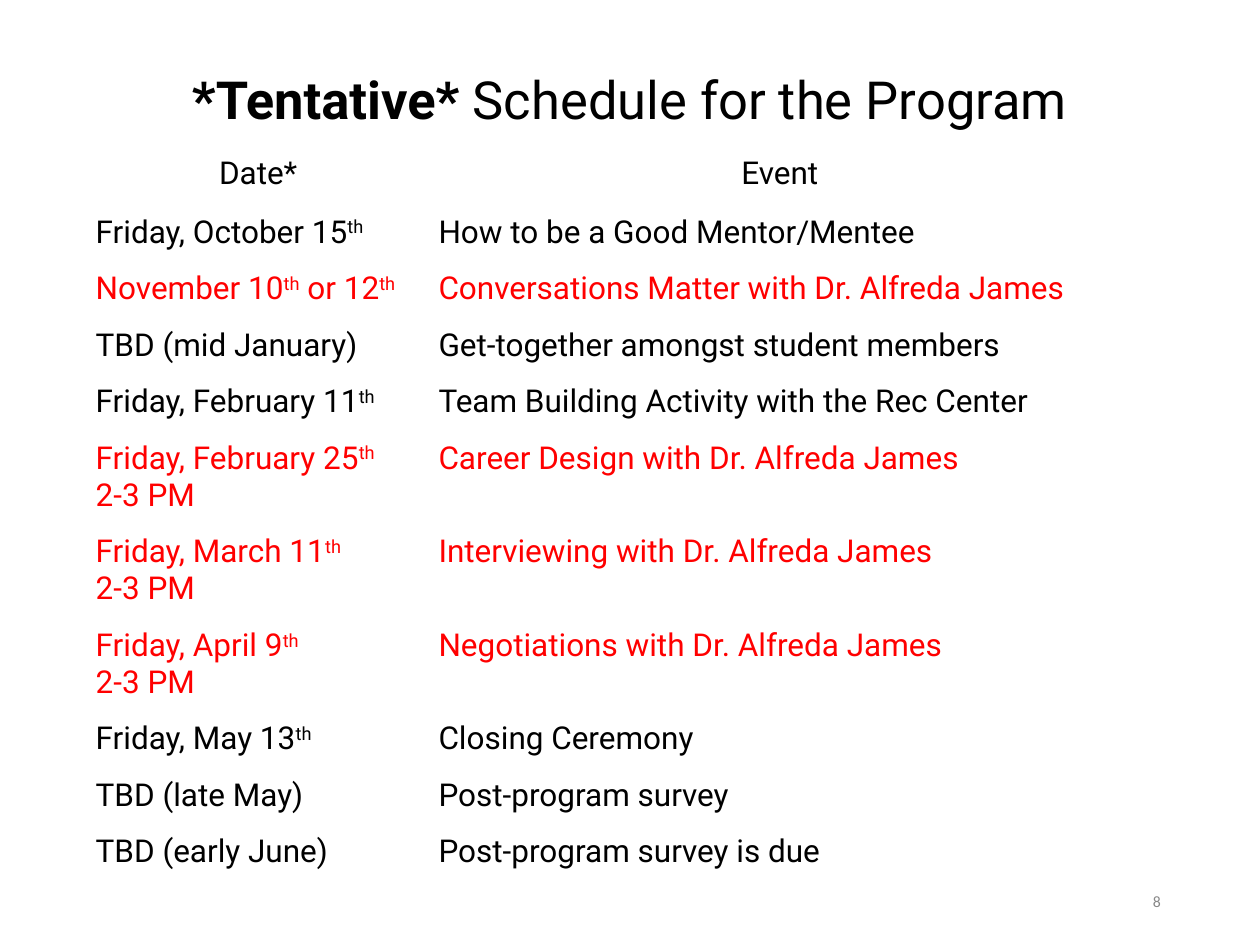
from dataclasses import dataclass

from pptx import Presentation
from pptx.dml.color import RGBColor
from pptx.enum.text import MSO_ANCHOR, MSO_AUTO_SIZE, PP_ALIGN
from pptx.util import Cm, Pt

COLORS = {"text": "000000", "guest": "FF0000", "number": "888888"}
TITLE_ONLY_LAYOUT = 5
LEFT = Cm(1.75)
COLUMN_WIDTHS = (Cm(6.91), Cm(14.12))
ROW_HEIGHT = Cm(1.14)


@dataclass
class Session:
    date: str
    event: str
    color: str = "text"
    time: str = ""


SESSIONS = [
    Session("Friday, October 15^th", "How to be a Good Mentor/Mentee"),
    Session("November 10^th^ or 12^th", "Conversations Matter with Dr. Alfreda James", "guest"),
    Session("TBD (mid January)", "Get-together amongst student members"),
    Session("Friday, February 11^th", "Team Building Activity with the Rec Center"),
    Session("Friday, February 25^th", "Career Design with Dr. Alfreda James", "guest", "2-3 PM"),
    Session("Friday, March 11^th", "Interviewing with Dr. Alfreda James", "guest", "2-3 PM"),
    Session("Friday, April 9^th", "Negotiations with Dr. Alfreda James", "guest", "2-3 PM"),
    Session("Friday, May 13^th", "Closing Ceremony"),
    Session("TBD (late May)", "Post-program survey"),
    Session("TBD (early June)", "Post-program survey is due"),
]


def add_run(paragraph, text: str, size: float = 18, color: str = "text",
            font: str = "Roboto", bold: bool = False, raised: bool = False) -> None:
    run = paragraph.add_run()
    run.text = text
    run.font.name = font
    run.font.size = Pt(size)
    run.font.bold = bold
    run.font.color.rgb = RGBColor.from_string(COLORS[color])
    if raised:
        run._r.get_or_add_rPr().set("baseline", "30000")


def set_margins(target, horizontal: float, vertical: float) -> None:
    target.margin_left = target.margin_right = Cm(horizontal)
    target.margin_top = target.margin_bottom = Cm(vertical)


def fill_cell(cell, lines: list[str], color: str) -> None:
    set_margins(cell, 0.18, 0.18)
    for index, line in enumerate(lines):
        frame = cell.text_frame
        paragraph = frame.add_paragraph() if index else frame.paragraphs[0]
        for position, part in enumerate(line.split("^")):
            add_run(paragraph, part, color=color, raised=position % 2 == 1)


def add_schedule(slide) -> None:
    row_count = len(SESSIONS) + 1
    table = slide.shapes.add_table(row_count, len(COLUMN_WIDTHS), LEFT, Cm(3),
                                   sum(COLUMN_WIDTHS), ROW_HEIGHT * row_count).table
    table.first_row = table.horz_banding = False
    for column, width in zip(table.columns, COLUMN_WIDTHS):
        column.width = width
    for row in table.rows:
        row.height = ROW_HEIGHT
    for cell in table.iter_cells():
        cell.fill.background()
    for column, heading in enumerate(("Date*", "Event")):
        cell = table.cell(0, column)
        set_margins(cell, 0.25, 0.13)
        paragraph = cell.text_frame.paragraphs[0]
        paragraph.alignment = PP_ALIGN.CENTER
        add_run(paragraph, heading)
    for row, session in enumerate(SESSIONS, start=1):
        dates = [session.date, session.time] if session.time else [session.date]
        fill_cell(table.cell(row, 0), dates, session.color)
        fill_cell(table.cell(row, 1), [session.event], session.color)


def set_title(slide) -> None:
    title = slide.shapes.title
    title.left, title.top, title.width, title.height = LEFT, Cm(0.69), Cm(21.89), Cm(2.77)
    frame = title.text_frame
    frame.auto_size = MSO_AUTO_SIZE.NONE
    frame.vertical_anchor = MSO_ANCHOR.MIDDLE
    set_margins(frame, 0.18, 0.1)
    paragraph = frame.paragraphs[0]
    paragraph.alignment = PP_ALIGN.CENTER
    paragraph.line_spacing = 0.9
    add_run(paragraph, "*Tentative*", size=30, bold=True)
    add_run(paragraph, " Schedule for the Program", size=30)


def add_slide_number(slide) -> None:
    frame = slide.shapes.add_textbox(Cm(17.93), Cm(17.65), Cm(5.72), Cm(1.02)).text_frame
    frame.word_wrap = True
    frame.vertical_anchor = MSO_ANCHOR.MIDDLE
    paragraph = frame.paragraphs[0]
    paragraph.alignment = PP_ALIGN.RIGHT
    add_run(paragraph, "8", size=9, color="number", font="Calibri")


def main() -> None:
    presentation = Presentation()
    presentation.slide_width, presentation.slide_height = Cm(25.4), Cm(19.05)
    slide = presentation.slides.add_slide(presentation.slide_layouts[TITLE_ONLY_LAYOUT])
    add_slide_number(slide)
    add_schedule(slide)
    set_title(slide)
    presentation.save("out.pptx")


if __name__ == "__main__":
    main()
